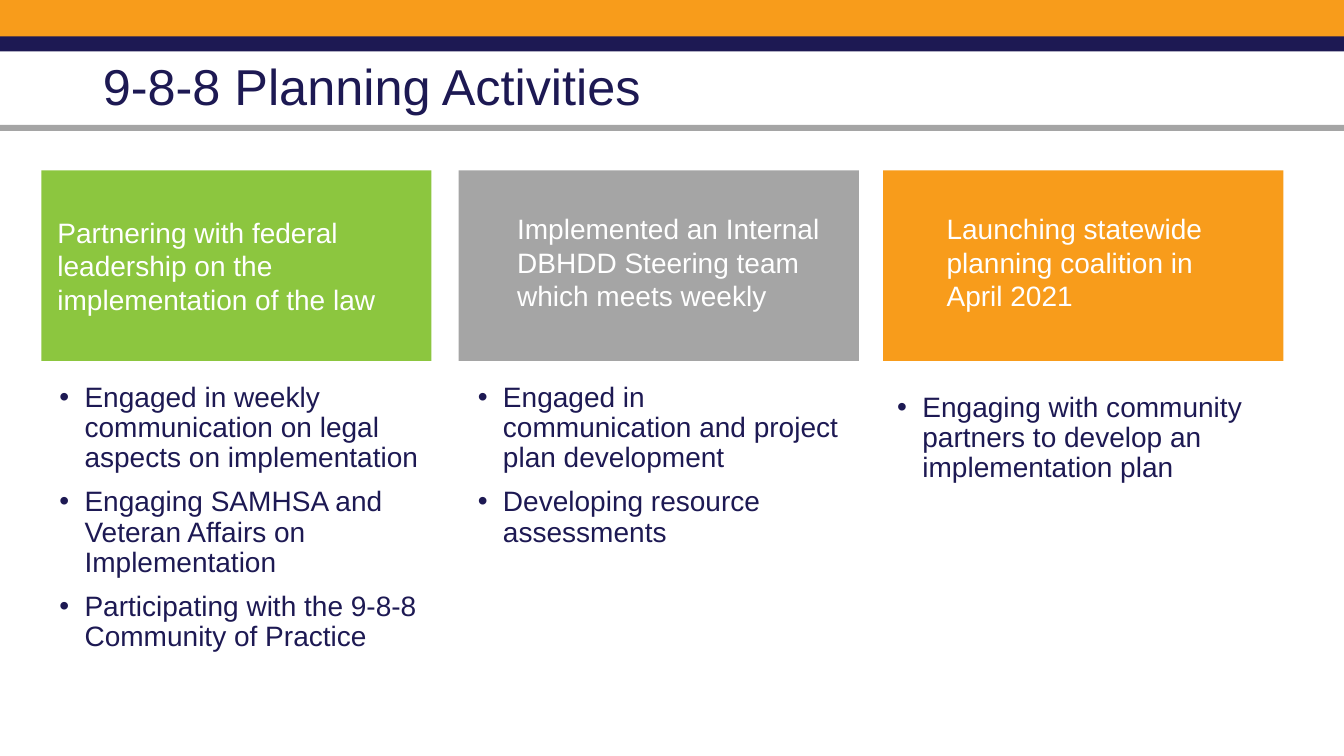
from dataclasses import dataclass

from lxml import etree
from pptx import Presentation
from pptx.dml.color import RGBColor
from pptx.enum.shapes import MSO_SHAPE
from pptx.enum.text import MSO_ANCHOR, MSO_AUTO_SIZE, PP_ALIGN
from pptx.oxml.ns import qn
from pptx.util import Inches, Pt

RECT = MSO_SHAPE.RECTANGLE
TOP, MIDDLE = MSO_ANCHOR.TOP, MSO_ANCHOR.MIDDLE
LEFT = PP_ALIGN.LEFT
NO_FIT = MSO_AUTO_SIZE.NONE

COLORS = {
    "orange": "F89C1B",
    "navy": "1D1953",
    "gray": "A5A5A5",
    "green": "8CC63F",
    "white": "FFFFFF",
}
CARD_TOP, CARD_HEIGHT = 1.69, 1.89


@dataclass
class SlideBuilder:
    """Adds elements in the deck's style to one slide."""

    slide: object
    font: str = "Arial"
    size: int = 20
    title_size: int = 36

    def set_text(self, sp, lines, color, size=None, anchor=TOP, spacing=1.0):
        tf = sp.text_frame
        tf.text = "\n".join(lines)
        tf.word_wrap = True
        tf.auto_size = NO_FIT
        tf.vertical_anchor = anchor
        for p in tf.paragraphs:
            p.alignment = LEFT
            p.line_spacing = spacing
            for r in p.runs:
                r.font.name = self.font
                r.font.size = Pt(size or self.size)
                r.font.color.rgb = RGBColor.from_string(COLORS[color])
        return tf

    def title(self, text, *box):
        sp = self.slide.shapes.title
        sp.left, sp.top, sp.width, sp.height = map(Inches, box)
        self.set_text(sp, [text], "navy", self.title_size, MIDDLE, 0.9)

    def rect(self, color, *box):
        sp = self.slide.shapes.add_shape(RECT, *map(Inches, box))
        sp.shadow.inherit = False
        sp.fill.solid()
        sp.fill.fore_color.rgb = RGBColor.from_string(COLORS[color])
        sp.line.fill.background()
        return sp

    def card(self, text, color, left, width):
        sp = self.rect(color, left, CARD_TOP, width, CARD_HEIGHT)
        if text:
            tf = self.set_text(sp, [text], "white", anchor=MIDDLE)
            tf.margin_left = tf.margin_right = Inches(0.16)
            tf.margin_top = tf.margin_bottom = Inches(0.16)

    def label(self, text, left, width):
        sp = self.slide.shapes.add_textbox(*map(Inches, (left, 2.05, width, 1.11)))
        self.set_text(sp, [text], "white")

    def bullets(self, lines, *box):
        sp = self.slide.shapes.add_textbox(*map(Inches, box))
        tf = self.set_text(sp, lines, "navy", spacing=0.9)
        for p in tf.paragraphs:
            p.space_before = Pt(10)
            pPr = p._p.get_or_add_pPr()
            pPr.set("marL", str(Inches(0.25)))
            pPr.set("indent", str(Inches(-0.25)))
            etree.SubElement(pPr, qn("a:buFont"), typeface=self.font)
            etree.SubElement(pPr, qn("a:buChar"), char="•")


def main():
    prs = Presentation()
    prs.slide_width, prs.slide_height = Inches(13.33), Inches(7.5)
    s = SlideBuilder(prs.slides.add_slide(prs.slide_layouts[5]))

    for color, top, height in (
        ("orange", 0, 0.4),
        ("navy", 0.36, 0.15),
        ("gray", 1.24, 0.06),
    ):
        s.rect(color, 0, top, 13.33, height)
    s.title("9-8-8 Planning Activities", 0.92, 0.16, 11.5, 1.45)

    s.card(
        "Partnering with federal leadership on the implementation of the law",
        "green", 0.41, 3.87,
    )
    s.card("", "gray", 4.55, 3.97)
    s.card("", "orange", 8.76, 3.97)
    s.label(
        "Implemented an Internal DBHDD Steering team which meets weekly",
        5.03, 3.48,
    )
    s.label("Launching statewide planning coalition in April 2021", 9.29, 3.13)

    s.bullets([
        "Engaged in weekly communication on legal aspects on implementation",
        "Engaging SAMHSA and Veteran Affairs on Implementation",
        "Participating with the 9-8-8 Community of Practice",
    ], 0.49, 3.75, 3.79, 3.28)
    s.bullets([
        "Engaged in communication and project plan development",
        "Developing resource assessments",
    ], 4.64, 3.75, 3.79, 3.28)
    s.bullets([
        "Engaging with community partners to develop an implementation plan",
    ], 8.8, 3.85, 4.11, 3.28)

    prs.save("out.pptx")


if __name__ == "__main__":
    main()
